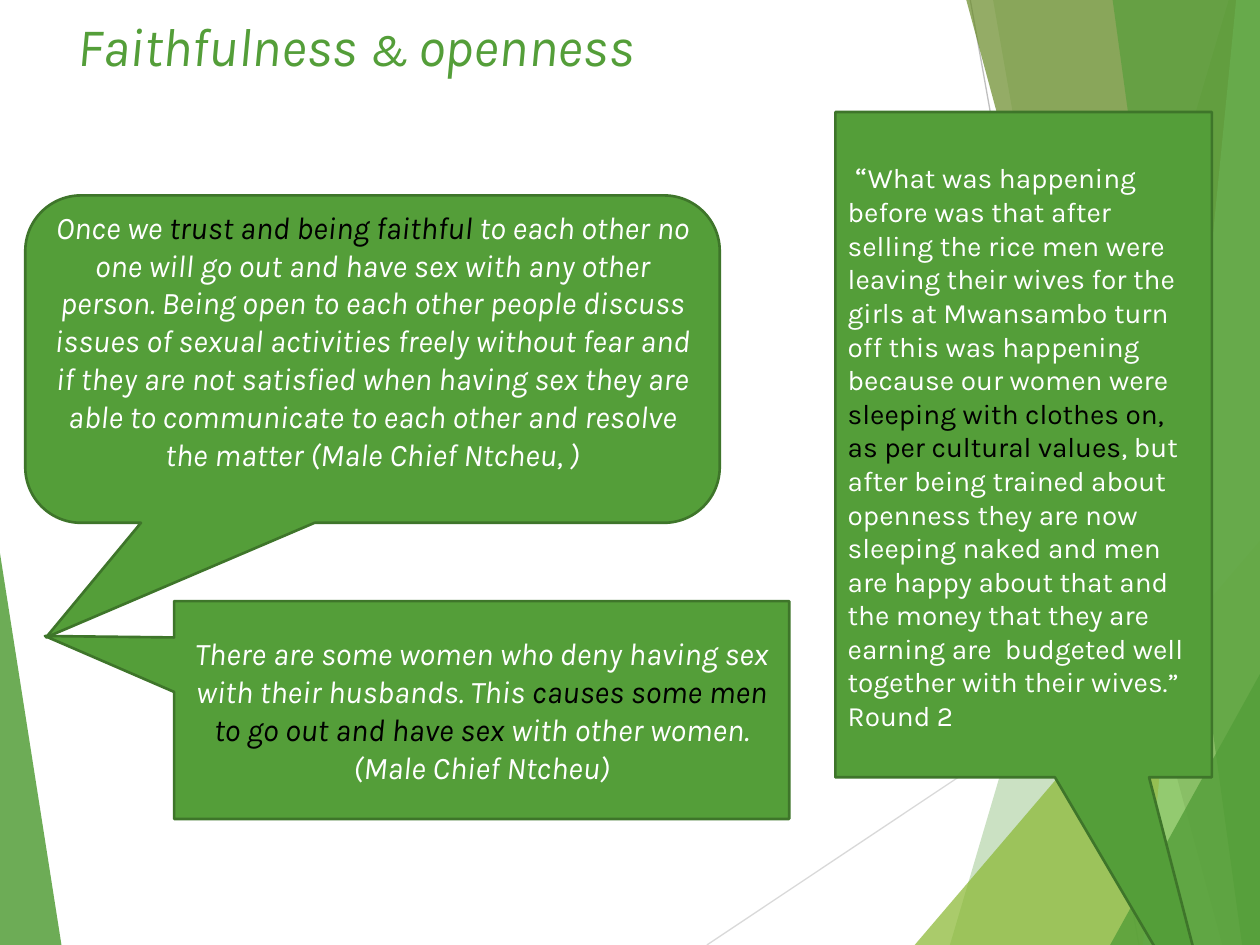
from dataclasses import dataclass

from lxml.etree import SubElement
from pptx import Presentation
from pptx.dml.color import RGBColor
from pptx.enum.shapes import MSO_CONNECTOR, MSO_SHAPE
from pptx.enum.text import MSO_ANCHOR, PP_ALIGN
from pptx.oxml.ns import qn
from pptx.slide import Slide
from pptx.text.text import _Paragraph as Paragraph
from pptx.util import Cm, Pt

WIDTH, HEIGHT = 25.4, 19.05
Point = tuple[float, float]


@dataclass(frozen=True)
class Theme:
    font: str = "Karla"
    green: str = "549E39"
    outline: str = "3E752A"
    lime: str = "8AB833"
    olive: str = "678A26"
    mint: str = "93D07D"
    pale_line: str = "D9D9D9"
    grey_line: str = "BFBFBF"
    text: str = "FFFFFF"
    emphasis: str = "000000"
    title_size: float = 31
    ampersand_size: float = 27
    quote_size: float = 18
    small_quote_size: float = 16


THEME = Theme()


@dataclass(frozen=True)
class TextRun:
    text: str
    color: str = THEME.text
    size: float = THEME.quote_size
    italic: bool = True


@dataclass(frozen=True)
class Facet:
    points: list[Point]
    color: str
    opacity: int


@dataclass(frozen=True)
class Ray:
    start: Point
    end: Point
    color: str


@dataclass(frozen=True)
class Callout:
    kind: MSO_SHAPE
    box: tuple[float, float, float, float]
    adjustments: tuple[float, ...]
    runs: list[TextRun]
    alignment: PP_ALIGN = PP_ALIGN.CENTER
    bottom_inset: float = 0.13


def band(top: float, bottom: float) -> list[Point]:
    """Outline from a slanted left side to the right edge of the slide."""
    return [(top, 0), (bottom, HEIGHT), (WIDTH, HEIGHT), (WIDTH, 0)]


def corner(left: float, top: float) -> list[Point]:
    """Triangle in the lower right corner of the slide."""
    return [(left, HEIGHT), (WIDTH, top), (WIDTH, HEIGHT)]


LEFT_FACET = Facet([(0, 11.15), (1.24, HEIGHT), (0, HEIGHT)], THEME.green, 85)
RAYS = [
    Ray((14.25, HEIGHT), (WIDTH, 11.61), THEME.pale_line),
    Ray((19.56, 0), (22.96, HEIGHT), THEME.grey_line),
]
RIGHT_FACETS = [
    Facet(band(24.77, 19.15), THEME.green, 30),
    Facet(band(20.02, 23.34), THEME.green, 20),
    Facet(corner(18.44, 10.9), THEME.lime, 72),
    Facet(band(19.48, 24.64), THEME.olive, 70),
    Facet(band(24.92, 23.04), THEME.mint, 70),
    Facet(band(22.43, 25.04), THEME.green, 65),
    Facet(corner(22.38, 13.59), THEME.green, 80),
]
TITLE = [
    TextRun("Faithfulness ", THEME.green, THEME.title_size),
    TextRun("& ", THEME.green, THEME.ampersand_size),
    TextRun("openness", THEME.green, THEME.title_size),
]
CALLOUTS = [
    Callout(
        MSO_SHAPE.ROUNDED_RECTANGULAR_CALLOUT, (0.51, 3.94, 14, 6.6), (-0.47, 0.85, 0.17),
        [
            TextRun("Once we "),
            TextRun("trust and being faithful ", THEME.emphasis),
            TextRun("to each other no one will go out and have sex with any other person. "
                    "Being open to each other people discuss issues of sexual activities "
                    "freely without fear and if they are not satisfied when having sex they "
                    "are able to communicate to each other and resolve the matter "
                    "(Male Chief Ntcheu, )"),
        ],
        bottom_inset=0.89,
    ),
    Callout(
        MSO_SHAPE.RECTANGULAR_CALLOUT, (3.51, 12.12, 12.4, 4.39), (-0.71, -0.34),
        [
            TextRun("There are some women who deny having sex with their husbands. This "),
            TextRun("causes some men to go out and have sex", THEME.emphasis),
            TextRun(" with other women. (Male Chief Ntcheu)"),
        ],
    ),
    Callout(
        MSO_SHAPE.RECTANGULAR_CALLOUT, (16.84, 2.26, 7.59, 13.41), (0.53, 0.93),
        [
            TextRun(" “", italic=False),
            TextRun("What was happening before was that after selling the rice men were "
                    "leaving their wives for the girls at Mwansambo turn off this was "
                    "happening because our women were ",
                    size=THEME.small_quote_size, italic=False),
            TextRun("sleeping with clothes on, as per cultural values",
                    THEME.emphasis, THEME.small_quote_size, False),
            TextRun(", but after being trained about openness they are now sleeping naked "
                    "and men are happy about that and the money that they are earning are  "
                    "budgeted well together with their wives.” Round 2",
                    size=THEME.small_quote_size, italic=False),
        ],
        PP_ALIGN.LEFT,
    ),
]


def add_runs(paragraph: Paragraph, runs: list[TextRun]) -> None:
    for item in runs:
        run = paragraph.add_run()
        run.text = item.text
        run.font.name = THEME.font
        run.font.size = Pt(item.size)
        run.font.italic = item.italic
        run.font.color.rgb = RGBColor.from_string(item.color)


def draw_facet(slide: Slide, facet: Facet) -> None:
    first, *rest = [(Cm(x), Cm(y)) for x, y in facet.points]
    builder = slide.shapes.build_freeform(*first, scale=1.0)
    builder.add_line_segments(rest, close=True)
    shape = builder.convert_to_shape()
    shape.shadow.inherit = False
    shape.fill.solid()
    shape.fill.fore_color.rgb = RGBColor.from_string(facet.color)
    color = next(shape.element.iter(qn("a:srgbClr")))
    SubElement(color, qn("a:alpha"), val=str(facet.opacity * 1000))
    shape.line.fill.background()


def draw_ray(slide: Slide, ray: Ray) -> None:
    ends = [Cm(value) for value in (*ray.start, *ray.end)]
    connector = slide.shapes.add_connector(MSO_CONNECTOR.STRAIGHT, *ends)
    connector.line.color.rgb = RGBColor.from_string(ray.color)
    connector.line.width = Pt(0.75)
    SubElement(connector.element.spPr, qn("a:effectLst"))


def draw_title(slide: Slide) -> None:
    box = slide.shapes.add_textbox(Cm(1.32), Cm(0.13), Cm(22.86), Cm(3.18))
    box.text_frame.word_wrap = True
    add_runs(box.text_frame.paragraphs[0], TITLE)


def draw_callout(slide: Slide, callout: Callout) -> None:
    shape = slide.shapes.add_shape(callout.kind, *(Cm(value) for value in callout.box))
    for index, value in enumerate(callout.adjustments):
        shape.adjustments[index] = value
    shape.shadow.inherit = False
    shape.fill.solid()
    shape.fill.fore_color.rgb = RGBColor.from_string(THEME.green)
    shape.line.color.rgb = RGBColor.from_string(THEME.outline)
    shape.line.width = Pt(1.5)
    frame = shape.text_frame
    frame.word_wrap = True
    frame.vertical_anchor = MSO_ANCHOR.MIDDLE
    frame.margin_bottom = Cm(callout.bottom_inset)
    frame.paragraphs[0].alignment = callout.alignment
    add_runs(frame.paragraphs[0], callout.runs)


def main() -> None:
    presentation = Presentation()
    presentation.slide_width, presentation.slide_height = Cm(WIDTH), Cm(HEIGHT)
    slide = presentation.slides.add_slide(presentation.slide_layouts[6])
    draw_facet(slide, LEFT_FACET)
    for ray in RAYS:
        draw_ray(slide, ray)
    for facet in RIGHT_FACETS:
        draw_facet(slide, facet)
    draw_title(slide)
    for callout in CALLOUTS:
        draw_callout(slide, callout)
    presentation.save("out.pptx")


if __name__ == "__main__":
    main()
